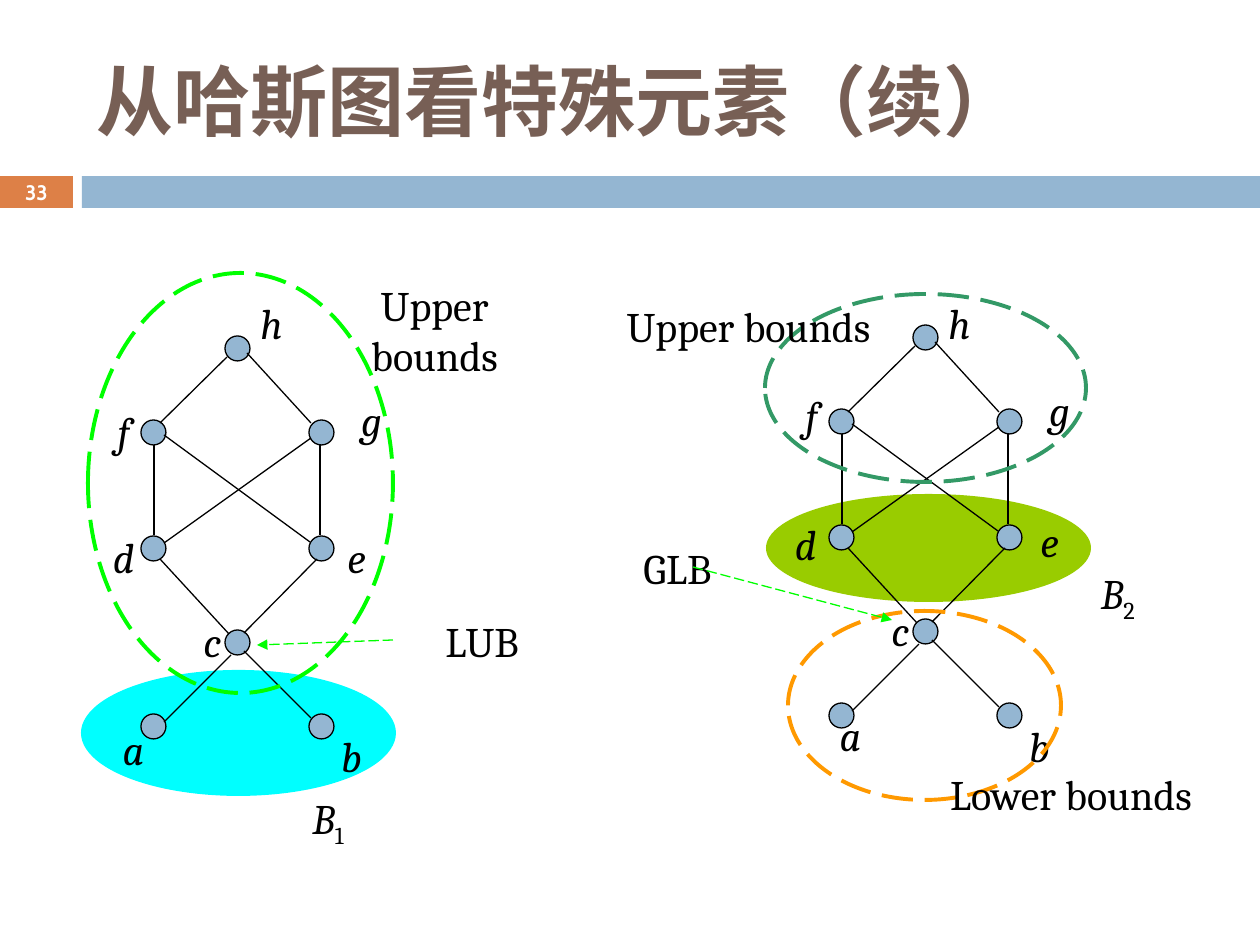
from lxml import etree
from pptx import Presentation
from pptx.dml.color import RGBColor
from pptx.enum.dml import MSO_LINE
from pptx.enum.shapes import MSO_CONNECTOR, MSO_SHAPE
from pptx.enum.text import MSO_ANCHOR, MSO_AUTO_SIZE, PP_ALIGN
from pptx.oxml.ns import qn
from pptx.util import Pt

OVAL, RECT = MSO_SHAPE.OVAL, MSO_SHAPE.RECTANGLE
LINE, DASH = MSO_CONNECTOR.STRAIGHT, MSO_LINE.LONG_DASH
CENTER, LEFT = PP_ALIGN.CENTER, PP_ALIGN.LEFT
MIDDLE, GROW = MSO_ANCHOR.MIDDLE, MSO_AUTO_SIZE.SHAPE_TO_FIT_TEXT
SCALE = 914400 / 126
COLORS = {
    "title": "775F55", "bar": "94B6D2", "tab": "DD8047", "white": "FFFFFF",
    "black": "000000", "cyan": "00FFFF", "olive": "99CC00",
    "lime": "00FF00", "orange": "FF9900", "green": "339966",
}
DOT = 25
LABEL = (105, 63)
NODES = {
    "h": (84, 0), "f": (0, 84), "g": (168, 84), "d": (0, 200),
    "e": (168, 200), "c": (84, 294), "a": (0, 378), "b": (168, 378),
}
EDGES = [
    (19, 87, 86, 21), (106, 17, 170, 87), (13, 199, 13, 109),
    (179, 199, 179, 108), (19, 223, 88, 298), (103, 315, 170, 382),
    (90, 319, 23, 386), (103, 297, 176, 223), (23, 207, 170, 102),
    (23, 99, 169, 206),
]
FIRST = {
    "set": (-60, 334, 315, 126), "fill": "cyan",
    "name": (119, 450, 136, 63), "index": "1",
    "labels": {
        "a": (-60, 381), "b": (158, 388), "c": (19, 273), "d": (-70, 189),
        "e": (163, 189), "f": (-70, 63), "g": (178, 52), "h": (78, -45),
    },
    "rings": [("lime", (-53, -63, 305, 420))],
    "notes": [("Upper bounds", (178, -63, 231, 115)),
              ("LUB", (262, 273, 158, 63))],
    "arrow": (252, 304, 116, 309),
}
SECOND = {
    "set": (-63, 169, 325, 108), "fill": "olive",
    "name": (221, 236, 136, 63), "index": "2",
    "labels": {
        "a": (-31, 378), "b": (158, 389), "c": (19, 273), "d": (-76, 187),
        "e": (168, 184), "f": (-70, 58), "g": (178, 53), "h": (78, -34),
    },
    "rings": [("orange", (-41, 286, 273, 189)),
              ("green", (-64, -31, 321, 188))],
    "notes": [("Lower bounds", (74, 437, 336, 64)),
              ("Upper bounds", (-219, -31, 277, 115)),
              ("GLB", (-241, 211, 179, 63))],
    "arrow": (-136, 242, 63, 295),
}


def emu(*sizes):
    """Turn px lengths into EMU."""
    return [round(size * SCALE) for size in sizes]


def rgb(name):
    """Look up a named colour."""
    return RGBColor.from_string(COLORS[name])


def shift(spot, box):
    """Move a box or a pair of points by an origin."""
    x, y, *rest = box
    return (spot[0] + x, spot[1] + y, *rest)


def style(para, size, font, color, align=CENTER, bold=False, italic=False):
    """Format a whole paragraph."""
    para.alignment = align
    para.font.size, para.font.name = Pt(size), font
    para.font.bold, para.font.italic = bold, italic
    para.font.color.rgb = rgb(color)


def shape(slide, kind, box, fill=None, line=None, width=0.75, dash=None):
    """Add a preset shape with an optional fill and outline."""
    item = slide.shapes.add_shape(kind, *emu(*box))
    item.shadow.inherit = False
    if fill:
        item.fill.solid()
        item.fill.fore_color.rgb = rgb(fill)
    else:
        item.fill.background()
    if line:
        item.line.color.rgb = rgb(line)
        item.line.width = Pt(width)
        item.line.dash_style = dash
    else:
        item.line.fill.background()


def link(slide, ends, color="black", dash=None, head=False):
    """Add a straight line, with an arrowhead at its end on request."""
    item = slide.shapes.add_connector(LINE, *emu(*ends))
    item.line.color.rgb = rgb(color)
    item.line.width = Pt(0.75)
    item.line.dash_style = dash
    if head:
        etree.SubElement(item.line._get_or_add_ln(), qn("a:tailEnd"), type="triangle")
    etree.SubElement(item._element.spPr, qn("a:effectLst"))


def label(slide, box, text, italic=False, index=None):
    """Add a centred label with an optional subscript."""
    frame = slide.shapes.add_textbox(*emu(*box)).text_frame
    frame.word_wrap, frame.auto_size = True, GROW
    para = frame.paragraphs[0]
    style(para, 24, "Cambria", "black", italic=italic)
    para.add_run().text = text
    if index:
        run = para.add_run()
        run.text, run.font.italic = index, False
        run._r.get_or_add_rPr().set("baseline", "-25000")


def header(slide, box):
    """Place the title, the bar and the page number."""
    x, y, width, _ = box
    shape(slide, RECT, (x, y + 176, 73, 32), "tab")
    shape(slide, RECT, (x + 82, y + 176, width - 82, 32), "bar")
    title = slide.shapes.title
    title.left, title.top, title.width, title.height = emu(x + 84, y + 32, 1124, 136)
    title.text_frame.text = "从哈斯图看特殊元素（续）"
    title.text_frame.vertical_anchor = MIDDLE
    style(title.text_frame.paragraphs[0], 44, "Cabin", "title", LEFT, bold=True)
    frame = slide.shapes.add_textbox(*emu(x, y + 175, 73, 34)).text_frame
    frame.text, frame.word_wrap, frame.vertical_anchor = "33", True, MIDDLE
    style(frame.paragraphs[0], 12, "Cabin", "white", bold=True)


def hasse(slide, spot, part):
    """Draw one Hasse diagram with its subset and bounds."""
    shape(slide, OVAL, shift(spot, part["set"]), part["fill"])
    label(slide, shift(spot, part["name"]), "B", True, part["index"])
    for name, place in NODES.items():
        shape(slide, OVAL, shift(spot, (*place, DOT, DOT)), "bar", "black")
        label(slide, shift(spot, (*part["labels"][name], *LABEL)), name, True)
    for x, y, right, low in EDGES:
        link(slide, shift(spot, (x, y)) + shift(spot, (right, low)))
    for color, box in part["rings"]:
        shape(slide, OVAL, shift(spot, box), None, color, 2.25, DASH)
    for text, box in part["notes"]:
        label(slide, shift(spot, box), text)
    x, y, right, low = part["arrow"]
    link(slide, shift(spot, (x, y)) + shift(spot, (right, low)), "lime", DASH, True)


def main():
    """Build and save the slide."""
    deck = Presentation()
    deck.slide_width, deck.slide_height = emu(1260, 945)
    slide = deck.slides.add_slide(deck.slide_layouts[5])
    header(slide, (0, 0, 1260, 209))
    hasse(slide, (141, 336), FIRST)
    hasse(slide, (829, 325), SECOND)
    deck.save("out.pptx")


if __name__ == "__main__":
    main()
